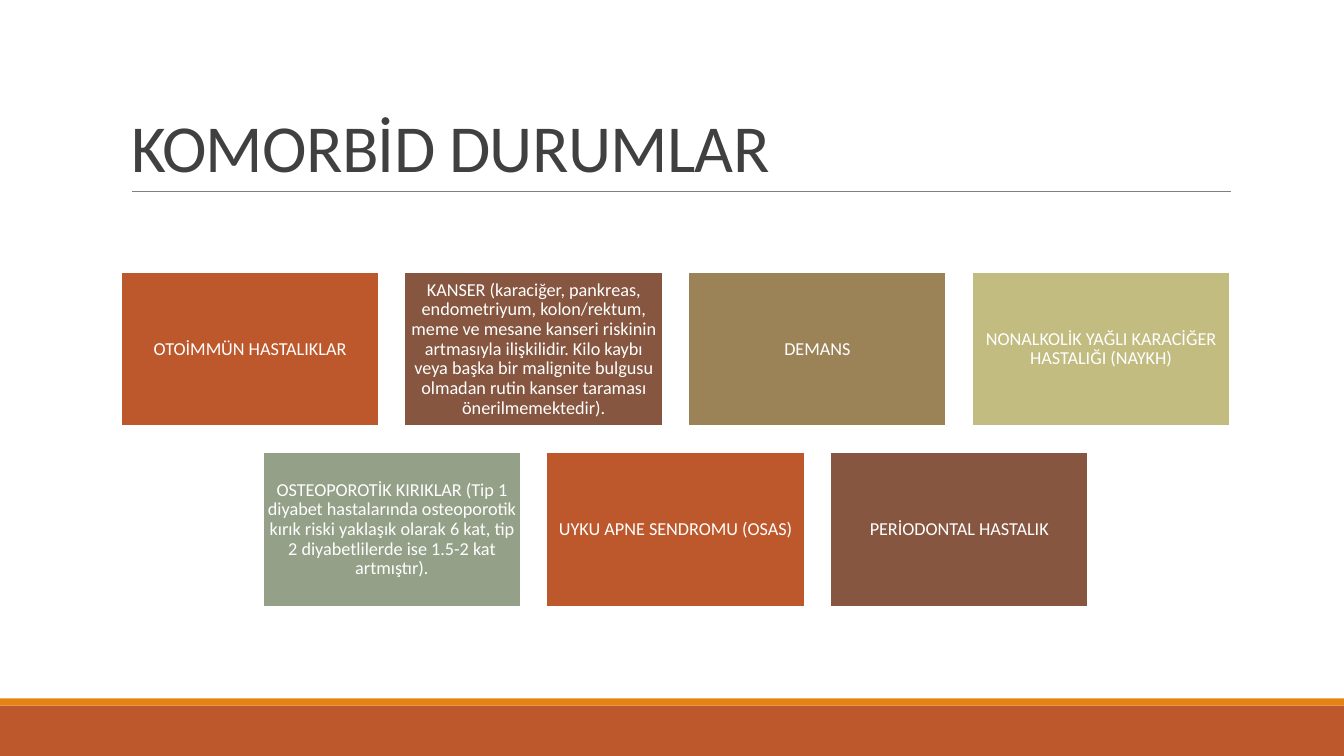
from lxml.etree import SubElement
from pptx import Presentation
from pptx.dml.color import RGBColor
from pptx.enum.shapes import MSO_CONNECTOR, MSO_SHAPE
from pptx.enum.text import MSO_ANCHOR, MSO_AUTO_SIZE, PP_ALIGN
from pptx.oxml.ns import qn
from pptx.util import Inches, Pt

WHITE = RGBColor(0xFF, 0xFF, 0xFF)
DARK = RGBColor(0x40, 0x40, 0x40)
GREY = RGBColor(0x80, 0x80, 0x80)
ORANGE = RGBColor(0xE4, 0x83, 0x12)
RUST = RGBColor(0xBD, 0x58, 0x2C)
BROWN = RGBColor(0x86, 0x56, 0x40)
TAN = RGBColor(0x9B, 0x83, 0x57)
KHAKI = RGBColor(0xC2, 0xBC, 0x80)
SAGE = RGBColor(0x94, 0xA0, 0x88)
CARD_COLORS = [RUST, BROWN, TAN, KHAKI, SAGE]

CONDITIONS = [
    "OTOİMMÜN HASTALIKLAR",
    "KANSER (karaciğer, pankreas, endometriyum, kolon/rektum, meme ve mesane "
    "kanseri riskinin artmasıyla ilişkilidir. Kilo kaybı veya başka bir malignite "
    "bulgusu olmadan rutin kanser taraması önerilmemektedir).",
    "DEMANS",
    "NONALKOLİK YAĞLI KARACİĞER HASTALIĞI (NAYKH)",
    "OSTEOPOROTİK KIRIKLAR (Tip 1 diyabet hastalarında osteoporotik kırık riski "
    "yaklaşık olarak 6 kat, tip 2 diyabetlilerde ise 1.5-2 kat artmıştır).",
    "UYKU APNE SENDROMU (OSAS)",
    "PERİODONTAL HASTALIK",
]


def write_text(tf, text, size, color, align, anchor, line_spacing, inset, spacing=0):
    tf.word_wrap = True
    tf.auto_size = MSO_AUTO_SIZE.NONE
    tf.vertical_anchor = anchor
    tf.margin_left = tf.margin_right = Inches(inset)
    tf.margin_top = tf.margin_bottom = Inches(0.05)
    p = tf.paragraphs[0]
    p.alignment = align
    p.line_spacing = line_spacing
    r = p.add_run()
    r.text = text
    r.font.name = "Calibri"
    r.font.size = Pt(size)
    r.font.color.rgb = color
    if spacing:
        r.font._element.set("spc", str(int(spacing * 100)))


def add_box(s, left, top, width, height, fill):
    sp = s.shapes.add_shape(MSO_SHAPE.RECTANGLE, Inches(left), Inches(top),
                            Inches(width), Inches(height))
    sp.shadow.inherit = False
    sp.fill.solid()
    sp.fill.fore_color.rgb = fill
    sp.line.fill.background()
    return sp


def add_footer(s, left, top, width, height, stripe=0.07):
    add_box(s, left, top + stripe, width, height - stripe, RUST)
    add_box(s, left, top, width, stripe, ORANGE)


def add_title(s, left, top, width, height):
    bottom = top + height
    rule = s.shapes.add_connector(MSO_CONNECTOR.STRAIGHT, Inches(left + 0.11), Inches(bottom),
                                  Inches(left + width + 0.01), Inches(bottom))
    rule.line.color.rgb = GREY
    rule.line.width = Pt(0.5)
    SubElement(rule._element.spPr, qn("a:effectLst"))
    title = s.shapes.title
    title.left, title.top = Inches(left), Inches(top)
    title.width, title.height = Inches(width), Inches(height)
    write_text(title.text_frame, "KOMORBİD DURUMLAR", size=48, color=DARK,
               align=PP_ALIGN.LEFT, anchor=MSO_ANCHOR.BOTTOM,
               line_spacing=0.85, inset=0.1, spacing=-0.5)


def add_cards(s, left, top, width, height, columns=4, card_w=2.56, card_h=1.53):
    step_x = (width - card_w) / (columns - 1)
    step_y = height - card_h
    for i, text in enumerate(CONDITIONS):
        row, col = divmod(i, columns)
        count = min(columns, len(CONDITIONS) - row * columns)
        indent = (columns - count) * step_x / 2
        sp = add_box(s, left + indent + col * step_x, top + row * step_y,
                     card_w, card_h, CARD_COLORS[i % len(CARD_COLORS)])
        sp.line.color.rgb = WHITE
        sp.line.width = Pt(1.25)
        write_text(sp.text_frame, text, size=13, color=WHITE, align=PP_ALIGN.CENTER,
                   anchor=MSO_ANCHOR.MIDDLE, line_spacing=0.9, inset=0.05)


def main():
    prs = Presentation()
    prs.slide_width, prs.slide_height = Inches(13.33), Inches(7.5)
    s = prs.slides.add_slide(prs.slide_layouts[5])
    add_footer(s, 0, 6.93, 13.33, 0.57)
    add_title(s, 1.2, 0.31, 11, 1.59)
    add_cards(s, 1.2, 2.7, 11, 3.32)
    prs.save("out.pptx")


if __name__ == "__main__":
    main()
